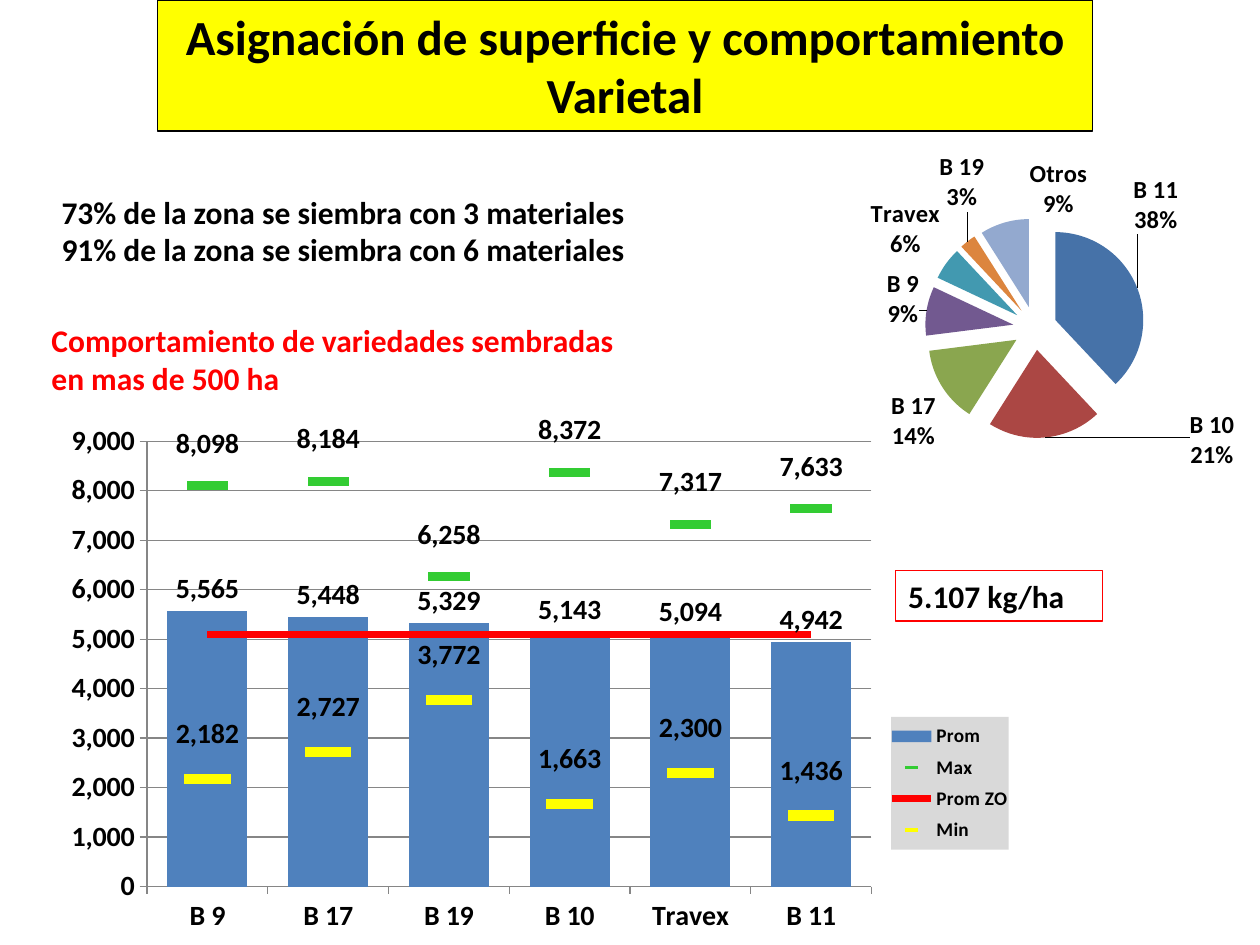
from lxml.etree import SubElement
from pptx import Presentation
from pptx.chart.data import CategoryChartData
from pptx.dml.color import RGBColor
from pptx.enum.chart import (XL_CHART_TYPE, XL_LABEL_POSITION, XL_LEGEND_POSITION,
                             XL_MARKER_STYLE, XL_TICK_MARK)
from pptx.enum.shapes import MSO_SHAPE
from pptx.enum.text import MSO_ANCHOR, PP_ALIGN
from pptx.oxml import parse_xml
from pptx.oxml.ns import nsdecls, qn
from pptx.util import Inches, Pt

FONT = "Calibri"
COLORS = {
    "black": "000000", "red": "FF0000", "yellow": "FFFF00", "green": "33CC33",
    "bar": "4F81BD", "grid": "868686", "legend": "D9D9D9",
}
PIE_COLORS = ["4672A8", "AB4744", "8AA64F", "725990", "4299B0", "DC853E", "93A9CF"]
SHARES = {"B 11": 38, "B 10": 21, "B 17": 14, "B 9": 9, "Travex": 6, "B 19": 3, "Otros": 9}
# Shift of a pie label from its default place, as a share of the chart size
LABEL_SHIFTS = {"B 11": (-0.02, -0.13), "B 10": (0.27, -0.09), "B 9": (0, 0.05),
                "B 19": (0.04, -0.06), "Otros": (0.16, 0.01)}
VARIETIES = ["B 9", "B 17", "B 19", "B 10", "Travex", "B 11"]
YIELDS = {
    "Prom": [5565, 5448, 5329, 5143, 5094, 4942],
    "Max": [8098, 8184, 6258, 8372, 7317, 7633],
    "Prom ZO": [5100] * 6,
    "Min": [2182, 2727, 3772, 1663, 2300, 1436],
}


def rgb(name):
    return RGBColor.from_string(COLORS[name])


def paint(fill, color):
    fill.solid()
    fill.fore_color.rgb = color


def style_font(font, size, bold=True, color="black"):
    font.name = FONT
    font.size = Pt(size)
    font.bold = bold
    font.color.rgb = rgb(color)


def add_text(slide, lines, left, top, width, height, size=18, color="black",
             fill=None, line=None, align=PP_ALIGN.LEFT):
    """Add bold lines of text, in a rectangle if a line colour is given."""
    box = [Inches(value) for value in (left, top, width, height)]
    if line:
        shape = slide.shapes.add_shape(MSO_SHAPE.RECTANGLE, *box)
        shape.shadow.inherit = False
        shape.line.color.rgb = rgb(line)
        shape.line.width = Pt(0.75)
        if fill:
            paint(shape.fill, rgb(fill))
        else:
            shape.fill.background()
    else:
        shape = slide.shapes.add_textbox(*box)
    frame = shape.text_frame
    frame.word_wrap = True
    frame.vertical_anchor = MSO_ANCHOR.TOP
    frame.text = "\n".join(lines)
    for paragraph in frame.paragraphs:
        paragraph.alignment = align
        style_font(paragraph.runs[0].font, size, color=color)


def add_chart(slide, kind, categories, series, left, top, width, height):
    data = CategoryChartData()
    data.categories = categories
    for name, values in series.items():
        data.add_series(name, values)
    frame = slide.shapes.add_chart(kind, Inches(left), Inches(top),
                                   Inches(width), Inches(height), data)
    chart = frame.chart
    chart.has_title = False
    chart.has_legend = False
    style_font(chart.font, 10, bold=False)
    return chart


def make_layout(target=None, **values):
    """Return a manual layout; without w and h it is a shift of a label."""
    layout = parse_xml(f"<c:layout {nsdecls('c')}><c:manualLayout/></c:layout>")
    entries = {"layoutTarget": target} if target else {}
    if "w" in values:
        entries.update(xMode="edge", yMode="edge")
    for tag, value in {**entries, **values}.items():
        SubElement(layout[0], qn(f"c:{tag}")).set("val", str(value))
    return layout


def place_plot(chart, **values):
    plot_area = chart._chartSpace.chart.plotArea
    for old in plot_area.findall(qn("c:layout")):
        plot_area.remove(old)
    plot_area.insert(0, make_layout("inner", **values))


def style_labels(labels, size, number_format, position):
    labels.number_format = number_format
    labels.number_format_is_linked = False
    labels.position = position
    style_font(labels.font, size)


def add_share_pie(slide):
    chart = add_chart(slide, XL_CHART_TYPE.PIE, list(SHARES), {"Superficie": SHARES.values()},
                      6.02, 1.09, 4.22, 3.06)
    place_plot(chart, x=0.31, y=0.21, w=0.42, h=0.57)
    series = chart.plots[0].series[0]
    explosion = parse_xml(f'<c:explosion {nsdecls("c")} val="25"/>')
    series._element.find(qn("c:tx")).addnext(explosion)
    labels = series.data_labels
    style_labels(labels, 14, "0%", XL_LABEL_POSITION.OUTSIDE_END)
    labels.show_value = False
    labels.show_category_name = True
    labels.show_percentage = True
    group = labels._element
    for old in group.findall(qn("c:showLeaderLines")):
        group.remove(old)
    SubElement(group, qn("c:separator")).text = "\n"
    SubElement(group, qn("c:showLeaderLines")).set("val", "1")
    for index, (name, color) in enumerate(zip(SHARES, PIE_COLORS)):
        point = series.points[index]
        paint(point.format.fill, RGBColor.from_string(color))
        if name in LABEL_SHIFTS:
            shift_label(group, point, index, *LABEL_SHIFTS[name])


def shift_label(group, point, index, x, y):
    style_font(point.data_label.font, 14)
    point.data_label.position = XL_LABEL_POSITION.OUTSIDE_END
    label = next(item for item in group.findall(qn("c:dLbl"))
                 if item.find(qn("c:idx")).get("val") == str(index))
    number_format = parse_xml(
        f'<c:numFmt {nsdecls("c")} formatCode="0%" sourceLinked="0"/>')
    label.find(qn("c:idx")).addnext(make_layout(x=x, y=y))
    label.find(qn("c:layout")).addnext(number_format)
    for tag, shown in (("showVal", 0), ("showCatName", 1), ("showPercent", 1)):
        label.find(qn(f"c:{tag}")).set("val", str(shown))
    SubElement(label, qn("c:separator")).text = "\n"


def move_to_lines(chart):
    """Move every series but the first from the columns to a line plot."""
    bars = chart.plots[0]._element
    lines = parse_xml(f'<c:lineChart {nsdecls("c")}><c:grouping val="standard"/>'
                      '<c:varyColors val="0"/></c:lineChart>')
    for series in bars.findall(qn("c:ser"))[1:]:
        for item in series.findall(qn("c:invertIfNegative")):
            series.remove(item)
        lines.append(series)
    SubElement(lines, qn("c:marker")).set("val", "1")
    for axis in bars.findall(qn("c:axId")):
        SubElement(lines, qn("c:axId")).set("val", axis.get("val"))
    bars.addnext(lines)


def style_marks(series, size, color):
    series.format.line.fill.background()
    series.marker.style = XL_MARKER_STYLE.DASH
    series.marker.size = size
    paint(series.marker.format.fill, rgb(color))
    series.marker.format.line.fill.background()
    style_labels(series.data_labels, 16, "#,##0", XL_LABEL_POSITION.ABOVE)
    series.data_labels.show_value = True


def add_legend(chart):
    chart.has_legend = True
    legend = chart.legend
    legend.position = XL_LEGEND_POSITION.RIGHT
    legend.include_in_layout = False
    style_font(legend.font, 11)
    overlay = legend._element.find(qn("c:overlay"))
    overlay.addprevious(make_layout(x=0.86, y=0.57, w=0.12, h=0.25))
    overlay.addnext(parse_xml(
        f'<c:spPr {nsdecls("c", "a")}><a:solidFill><a:srgbClr val="{COLORS["legend"]}"/>'
        '</a:solidFill></c:spPr>'))


def add_yield_chart(slide):
    chart = add_chart(slide, XL_CHART_TYPE.COLUMN_CLUSTERED, VARIETIES, YIELDS,
                      0.39, 3.28, 7.77, 4.22)
    place_plot(chart, x=0.1, y=0.05, w=0.74, h=0.84)
    move_to_lines(chart)
    bars, lines = chart.plots
    bars.gap_width, bars.overlap, bars.vary_by_categories = 51, 100, False
    average = bars.series[0]
    paint(average.format.fill, rgb("bar"))
    style_labels(average.data_labels, 16, "#,##0", XL_LABEL_POSITION.OUTSIDE_END)
    average.data_labels.show_value = True

    highest, zone, lowest = lines.series
    for series in lines.series:
        series.smooth = False
    style_marks(highest, 23, "green")
    style_marks(lowest, 26, "yellow")
    zone.marker.style = XL_MARKER_STYLE.NONE
    zone.format.line.color.rgb = rgb("red")
    zone.format.line.width = Pt(4)

    for axis in (chart.category_axis, chart.value_axis):
        style_font(axis.tick_labels.font, 16)
        axis.major_tick_mark = XL_TICK_MARK.OUTSIDE
        axis.format.line.color.rgb = rgb("grid")
    axis = chart.value_axis
    axis.minimum_scale, axis.maximum_scale, axis.major_unit = 0, 9000, 1000
    axis.tick_labels.number_format = "#,##0"
    axis.tick_labels.number_format_is_linked = False
    axis.major_gridlines.format.line.color.rgb = rgb("grid")
    add_legend(chart)


def main():
    presentation = Presentation()
    presentation.slide_width, presentation.slide_height = Inches(10), Inches(7.5)
    slide = presentation.slides.add_slide(presentation.slide_layouts[6])
    add_text(slide, ["Asignación de superficie y comportamiento Varietal"], 1.25, 0, 7.42, 1.04,
             size=28, fill="yellow", line="black", align=PP_ALIGN.CENTER)
    add_share_pie(slide)
    add_text(slide, ["73% de la zona se siembra con 3 materiales",
                     "91% de la zona se siembra con 6 materiales"], 0.39, 1.48, 4.77, 0.71)
    add_text(slide, ["Comportamiento de variedades sembradas en mas de 500 ha"],
             0.31, 2.5, 4.69, 0.71, color="red")
    add_yield_chart(slide)
    add_text(slide, ["5.107 kg/ha"], 7.11, 4.53, 1.64, 0.4, line="red")
    presentation.save("out.pptx")


if __name__ == "__main__":
    main()
